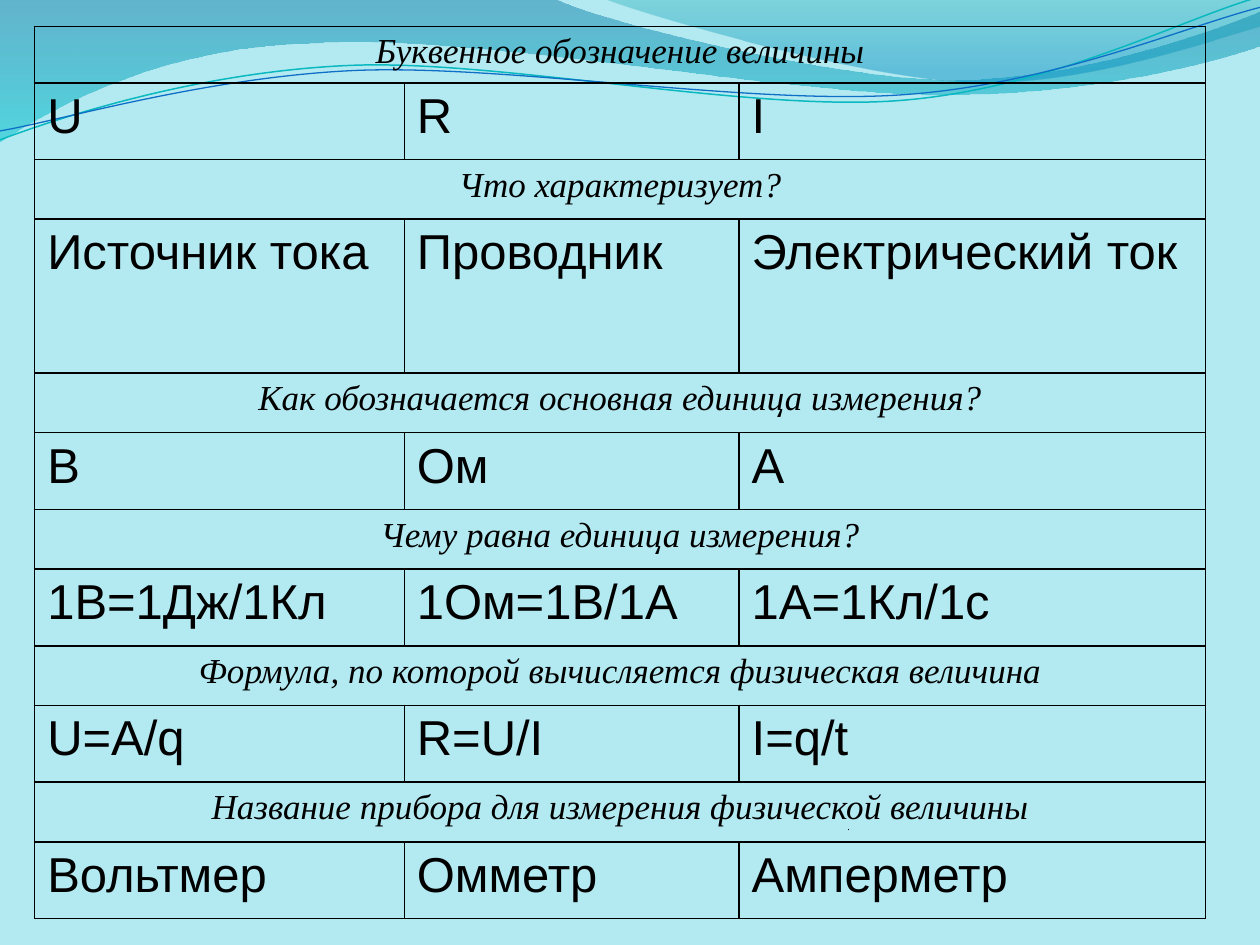
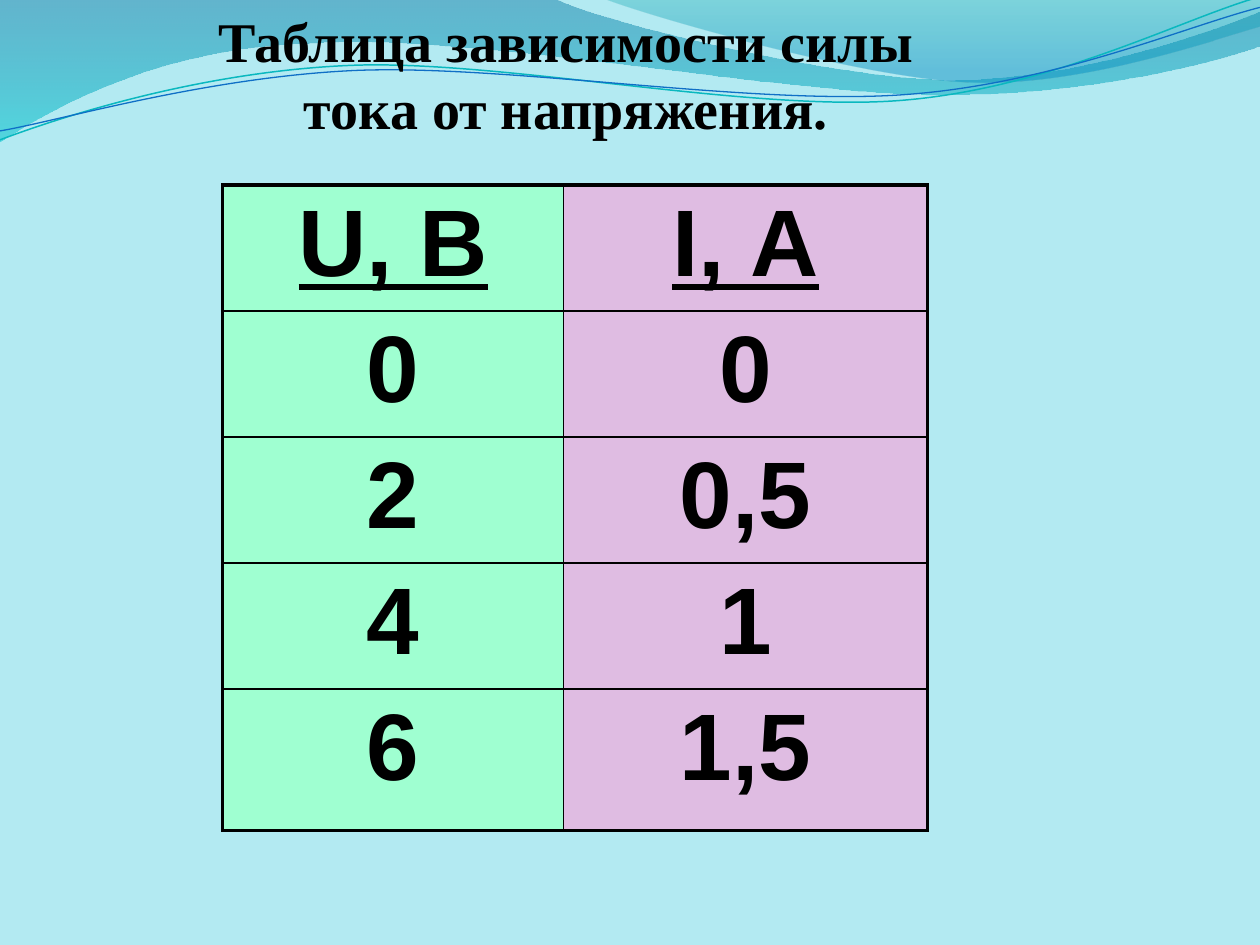
from dataclasses import dataclass
from typing import Optional

from lxml import etree
from pptx import Presentation
from pptx.dml.color import RGBColor
from pptx.enum.shapes import MSO_CONNECTOR
from pptx.enum.text import PP_ALIGN
from pptx.oxml.ns import qn
from pptx.util import Cm, Pt

LEFT, CENTER = PP_ALIGN.LEFT, PP_ALIGN.CENTER
STRAIGHT = MSO_CONNECTOR.STRAIGHT

BLACK = RGBColor(0x00, 0x00, 0x00)
SKY = RGBColor(0xB3, 0xEA, 0xF2)
MINT = RGBColor(0x9F, 0xFF, 0xD1)
LILAC = RGBColor(0xDF, 0xBC, 0xE2)
TEAL = RGBColor(0x0A, 0xB8, 0xBF)
BLUE = RGBColor(0x0F, 0x6F, 0xC6)

SERIF, SANS = "Times New Roman", "Arial"
HEAD = {"name": SERIF, "size": Pt(20), "italic": True}
BODY = {"name": SANS, "size": Pt(28)}
VALUE = {"name": SANS, "size": Pt(54), "bold": True}
LABEL = {**VALUE, "underline": True}
TITLE = {"name": SERIF, "size": Pt(32), "bold": True}

THIN, THICK = Pt(1), Pt(2.25)


@dataclass(frozen=True)
class Stop:
    place: float
    color: RGBColor
    alpha: int


@dataclass(frozen=True)
class Wave:
    """Steps in cm: two numbers are a line's end, six are a Bezier curve."""
    start: tuple
    steps: tuple
    stops: tuple = ()
    color: Optional[RGBColor] = None
    width: float = 0


WAVES = (
    Wave((0, 0), (
        (11.18, -0.03),
        (12.09, 0.43, 16.87, 1.6, 19.25, 1.6),
        (21.67, 1.6, 24.33, 0.66, 25.4, 0.23),
        (25.43, 0.91),
        (24.97, 1.12, 22.1, 1.93, 18.95, 1.91),
        (15.8, 1.91, 9.7, 0.71, 6.53, 0.86),
        (3.28, 0.91, 1.17, 2.11, -0.03, 2.87),
        (0, 0)),
        stops=(Stop(0, RGBColor(0x00, 0x74, 0xA1), 45),
               Stop(1, RGBColor(0x00, 0xC6, 0xCF), 55))),
    Wave((12.17, -0.03), (
        (12.93, 0.28, 17.32, 1.57, 19.53, 1.65),
        (21.74, 1.75, 24.41, 0.81, 25.4, 0.53),
        (25.4, 0),
        (12.17, -0.03)),
        stops=(Stop(0, RGBColor(0x00, 0xA1, 0xA9), 30),
               Stop(0.8, RGBColor(0x00, 0x8B, 0xBF), 45))),
    Wave((0, 2.82), (
        (1.22, 2.36, 4.01, 1.45, 7.04, 1.32),
        (10.03, 1.19, 15.06, 2.26, 18.11, 2.03),
        (21.16, 1.8, 23.83, 0.38, 25.35, -0.05)),
        color=TEAL, width=0.85),
    Wave((0, 2.64), (
        (1.19, 2.44, 4.17, 1.55, 7.19, 1.42),
        (10.24, 1.3, 15.16, 2.13, 18.21, 1.91),
        (21.23, 1.7, 23.9, 0.53, 25.4, 0.15)),
        color=BLUE, width=0.75),
)

TOPICS = (
    ("Буквенное обозначение величины", ("U", "R", "I")),
    ("Что характеризует?", ("Источник тока", "Проводник", "Электрический ток")),
    ("Как обозначается основная единица измерения?", ("В", "Ом", "А")),
    ("Чему равна единица измерения?", ("1В=1Дж/1Кл", "1Ом=1В/1А", "1А=1Кл/1с")),
    ("Формула, по которой вычисляется физическая величина",
     ("U=A/q", "R=U/I", "I=q/t")),
    ("Название прибора для измерения физической величины",
     ("Вольтмер", "Омметр", "Амперметр")),
)
READINGS = (("U, В", "I, А"), ("0", "0"), ("2", "0,5"), ("4", "1"), ("6", "1,5"))


def bend(shape, steps: tuple) -> None:
    """Turn each run of three lines that stands for a curve into a Bezier."""
    lines = list(shape.element.iter(qn("a:lnTo")))
    for step in steps:
        group, lines = lines[:len(step) // 2], lines[len(step) // 2:]
        if len(group) == 3:
            curve = etree.Element(qn("a:cubicBezTo"))
            group[0].addprevious(curve)
            for line in group:
                curve.append(line[0])
                line.getparent().remove(line)


def draw_wave(slide, wave: Wave):
    pen = slide.shapes.build_freeform(Cm(wave.start[0]), Cm(wave.start[1]))
    points = [(Cm(x), Cm(y)) for step in wave.steps
              for x, y in zip(step[::2], step[1::2])]
    pen.add_line_segments(points, close=bool(wave.stops))
    shape = pen.convert_to_shape()
    bend(shape, wave.steps)
    shape.shadow.inherit = False
    if not wave.stops:
        shape.fill.background()
        shape.line.color.rgb = wave.color
        shape.line.width = Pt(wave.width)
        return shape
    shape.line.fill.background()
    shape.fill.gradient()
    shape.fill.gradient_angle = 270
    for mark, stop in zip(shape.fill.gradient_stops, wave.stops):
        mark.position = stop.place
        mark.color.rgb = stop.color
    for tint, stop in zip(shape.element.spPr.iter(qn("a:srgbClr")), wave.stops):
        etree.SubElement(tint, qn("a:alpha"), val=str(stop.alpha * 1000))
    return shape


def dress(deck, slide) -> None:
    """Colour the master and move the waves, drawn on a slide, onto it."""
    master = deck.slide_master
    back = master.background.fill
    back.solid()
    back.fore_color.rgb = SKY
    tree = master.shapes.element
    for i, wave in enumerate(WAVES):
        tree.insert(2 + i, draw_wave(slide, wave).element)


def write(frame, text: str, style: dict, align) -> None:
    para = frame.paragraphs[0]
    para.alignment = align
    run = para.add_run()
    run.text = text
    run.font.color.rgb = BLACK
    for key, value in style.items():
        setattr(run.font, key, value)


def add_grid(slide, left: float, top: float, cols: list, rows: list, edge):
    """Add a clear table with thin inner rules and outer rules of width edge."""
    table = slide.shapes.add_table(
        len(rows), len(cols), Cm(left), Cm(top), Cm(sum(cols)), Cm(sum(rows))).table
    table.first_row = table.horz_banding = False
    for col, width in zip(table.columns, cols):
        col.width = Cm(width)
    for r, height in enumerate(rows):
        table.rows[r].height = Cm(height)
        for c in range(len(cols)):
            cell = table.cell(r, c)
            cell.fill.background()
            outer = {"L": c == 0, "R": c == len(cols) - 1,
                     "T": r == 0, "B": r == len(rows) - 1}
            for i, (side, out) in enumerate(outer.items()):
                rule = etree.Element(qn(f"a:ln{side}"), w=str(edge if out else THIN))
                fill = etree.SubElement(rule, qn("a:solidFill"))
                etree.SubElement(fill, qn("a:srgbClr"), val=str(BLACK))
                cell._tc.get_or_add_tcPr().insert(i, rule)
    return table


def add_topics(slide) -> None:
    dot = slide.shapes.add_connector(STRAIGHT, Cm(17.1), Cm(16.74), Cm(17.1), Cm(16.71))
    dot.line.color.rgb = BLACK
    dot.line.width = Pt(0.75)
    etree.SubElement(dot._element.spPr, qn("a:effectLst"))

    rows = [1.2, 1.55] * len(TOPICS)
    rows[0], rows[3] = 1.14, 3.1
    table = add_grid(slide, 0.7, 0.53, [7.45, 6.75, 9.4], rows, THIN)
    for i, (head, items) in enumerate(TOPICS):
        first = table.cell(2 * i, 0)
        first.merge(table.cell(2 * i, 2))
        write(first.text_frame, head, HEAD, CENTER)
        for c, item in enumerate(items):
            write(table.cell(2 * i + 1, c).text_frame, item, BODY, LEFT)


def add_readings(slide) -> None:
    rows = [2.54] * (len(READINGS) - 1) + [2.85]
    table = add_grid(slide, 4.49, 3.73, [6.87, 7.34], rows, THICK)
    for r, pair in enumerate(READINGS):
        for c, (text, color) in enumerate(zip(pair, (MINT, LILAC))):
            cell = table.cell(r, c)
            cell.fill.solid()
            cell.fill.fore_color.rgb = color
            write(cell.text_frame, text, VALUE if r else LABEL, CENTER)

    box = slide.shapes.add_textbox(Cm(3.71), Cm(0), Cm(15.4), Cm(2.97))
    box.text_frame.word_wrap = True
    write(box.text_frame, "Таблица зависимости силы тока от напряжения.", TITLE, CENTER)


def main() -> None:
    deck = Presentation()
    deck.slide_width, deck.slide_height = Cm(25.4), Cm(19.05)
    blank = deck.slide_layouts[6]
    first, second = (deck.slides.add_slide(blank) for _ in range(2))
    dress(deck, first)
    add_topics(first)
    add_readings(second)
    deck.save("out.pptx")


if __name__ == "__main__":
    main()
